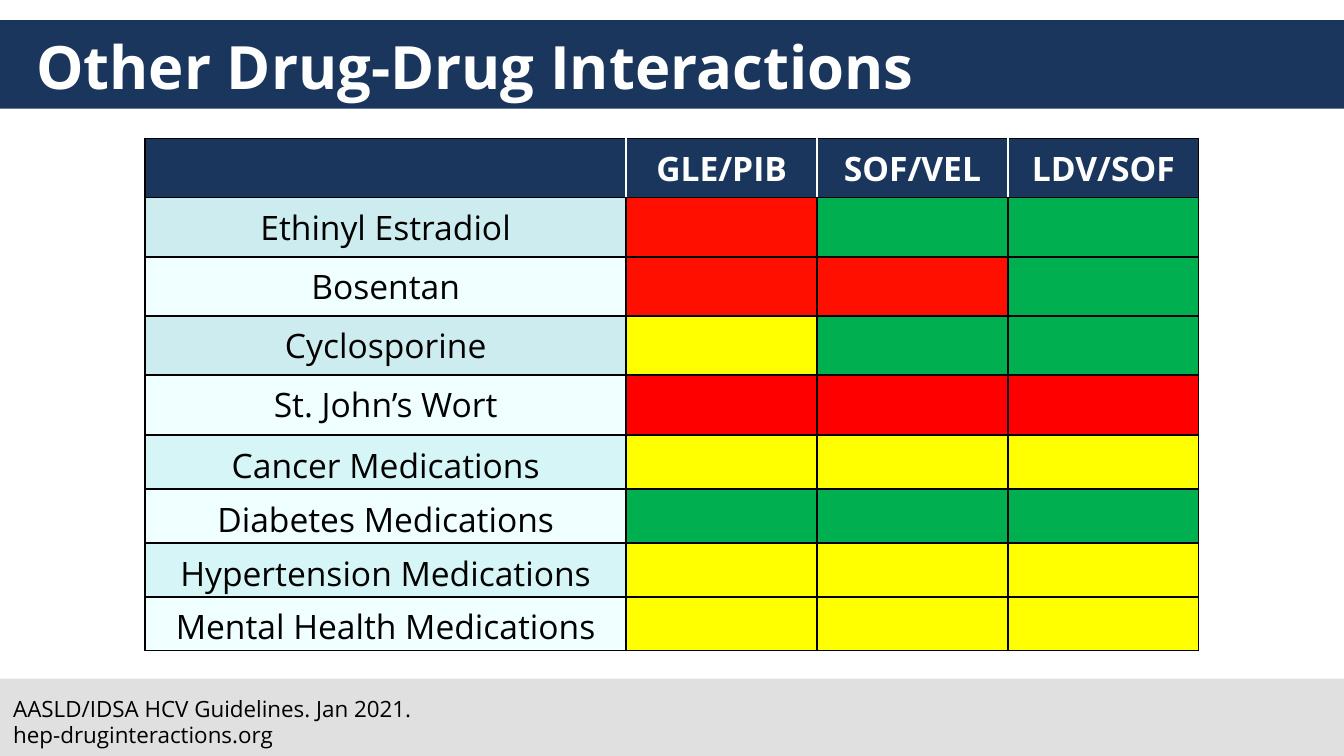
from pptx import Presentation
from pptx.dml.color import RGBColor
from pptx.enum.shapes import MSO_SHAPE
from pptx.enum.text import MSO_ANCHOR, PP_ALIGN
from pptx.oxml import parse_xml
from pptx.oxml.ns import nsdecls
from pptx.util import Inches, Pt

RECT = MSO_SHAPE.RECTANGLE
MIDDLE = MSO_ANCHOR.MIDDLE
LEFT, CENTER = PP_ALIGN.LEFT, PP_ALIGN.CENTER

THEME = {
    "font": "Open Sans",
    "title": 32, "cell": 18, "source": 12,
    "navy": "1B365D", "gray": "E0E0E0", "white": "FFFFFF", "black": "000000",
    "teal": "CDECEF", "aqua": "D5F5F6", "pale": "F0FFFF",
    "R": "FF0F00", "D": "FF0000", "G": "00B050", "Y": "FFFF00",
}


def color(name):
    return RGBColor.from_string(THEME[name])


def write(p, text, size="cell", fill="black", bold=False, align=LEFT):
    p.alignment = align
    r = p.add_run()
    r.text = text
    r.font.name = THEME["font"]
    r.font.size = Pt(THEME[size])
    r.font.bold = bold
    r.font.color.rgb = color(fill)


prs = Presentation()
prs.slide_width = Inches(10)
prs.slide_height = prs.slide_width * 9 // 16
s = prs.slides.add_slide(prs.slide_layouts[5])

for top, height, fill in ((0.15, 0.66, "navy"), (5.05, 0.58, "gray")):
    sp = s.shapes.add_shape(RECT, 0, Inches(top), prs.slide_width, Inches(height))
    sp.shadow.inherit = False
    sp.fill.solid()
    sp.fill.fore_color.rgb = color(fill)
    sp.line.fill.background()

title = s.shapes.title
title.left, title.top = Inches(0.17), Inches(0.15)
title.width, title.height = Inches(9.67), Inches(0.67)
title.text_frame.vertical_anchor = MIDDLE
write(title.text_frame.paragraphs[0], "Other Drug-Drug Interactions",
      size="title", fill="white", bold=True)
s.shapes._spTree.append(title._element)

header = ("", "GLE/PIB", "SOF/VEL", "LDV/SOF")
drugs = (("Ethinyl Estradiol", "RGG"), ("Bosentan", "RRG"),
         ("Cyclosporine", "YGG"), ("St. John’s Wort", "DDD"))
classes = (("Cancer Medications", "YYY"), ("Diabetes Medications", "GGG"),
           ("Hypertension Medications", "YYY"), ("Mental Health Medications", "YYY"))
drug_rows = [[(text, "navy") for text in header]]
class_rows = []
for rows, items, band in ((drug_rows, drugs, "teal"), (class_rows, classes, "aqua")):
    for i, (name, ratings) in enumerate(items):
        label_fill = "pale" if i % 2 else band
        rows.append([(name, label_fill)] + [("", rating) for rating in ratings])

for rows, top, row_height, bottom in ((drug_rows, 1.03, 0.44, 0.05),
                                      (class_rows, 3.24, 0.4, 0)):
    table = s.shapes.add_table(len(rows), 4, Inches(1.08), Inches(top), Inches(7.84),
                               Inches(row_height * len(rows))).table
    table.first_row = table.horz_banding = False
    for col, width in zip(table.columns, (3.58, 1.42, 1.42, 1.42)):
        col.width = Inches(width)
    for i, row in enumerate(rows):
        table.rows[i].height = Inches(row_height)
        for j, (text, fill) in enumerate(row):
            cell = table.cell(i, j)
            cell.vertical_anchor = MIDDLE
            cell.margin_bottom = Inches(bottom)
            cell.fill.solid()
            cell.fill.fore_color.rgb = color(fill)
            is_header = fill == "navy"
            if text:
                write(cell.text_frame.paragraphs[0], text, bold=is_header,
                      fill="white" if is_header else "black", align=CENTER)
            inner = {"L": j > 0, "R": j < 3}
            for k, side in enumerate("LRTB"):
                line = "white" if is_header and inner.get(side) else "black"
                cell._tc.get_or_add_tcPr().insert(k, parse_xml(
                    f'<a:ln{side} {nsdecls("a")} w="12700"><a:solidFill>'
                    f'<a:srgbClr val="{THEME[line]}"/></a:solidFill></a:ln{side}>'))

tf = s.shapes.add_textbox(0, Inches(5.12), Inches(3.67), Inches(0.5)).text_frame
tf.word_wrap = True
write(tf.paragraphs[0], "AASLD/IDSA HCV Guidelines. Jan 2021.", size="source")
write(tf.add_paragraph(), "hep-druginteractions.org", size="source")

prs.save("out.pptx")
